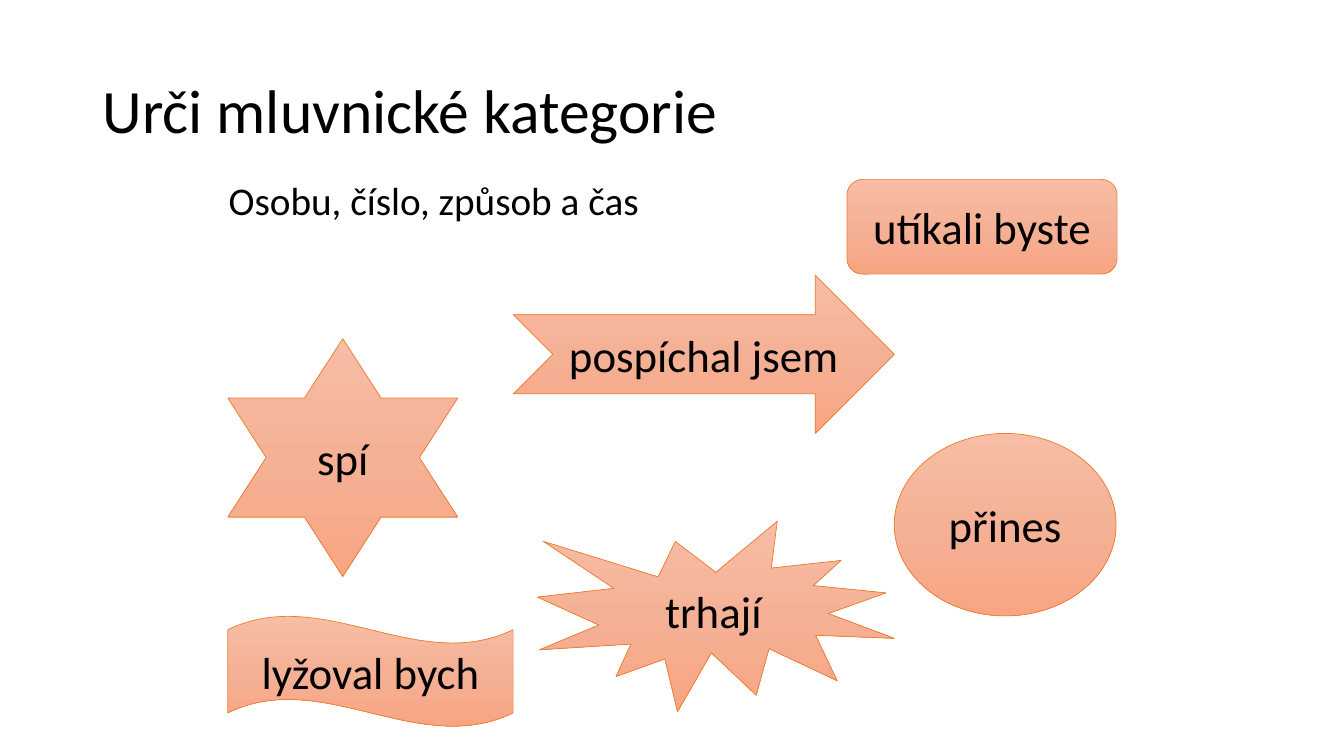
import copy
import pptx
import pptx.util
import pptx.dml.color
import pptx.enum.shapes
import pptx.enum.text
import pptx.oxml.ns

Inches = pptx.util.Inches
Kind = pptx.enum.shapes.MSO_SHAPE
Align = pptx.enum.text.PP_ALIGN
Anchor = pptx.enum.text.MSO_ANCHOR

HUES = {"ink": "000000", "edge": "ED7D31", "top": "F7BDA5", "mid": "F5B196", "base": "F8A582"}
FADE = [(0, "top"), (0.5, "mid"), (1, "base")]

HEADS = [
    ("Urči mluvnické kategorie", (0.92, 0.4, 11.5, 1.45), 44, Anchor.MIDDLE, 0),
    ("Osobu, číslo, způsob a čas", (2.17, 1.75, 9, 0.98), 28, Anchor.TOP, 10),
]
VERBS = [
    ("spí", Kind.STAR_6_POINT, (2.26, 3.36, 2.28, 2.36)),
    ("pospíchal jsem", Kind.NOTCHED_RIGHT_ARROW, (5.09, 2.73, 3.78, 1.57)),
    ("trhají", Kind.EXPLOSION1, (5.33, 5.17, 3.54, 1.89)),
    ("utíkali byste", Kind.ROUNDED_RECTANGLE, (8.4, 1.78, 2.68, 0.94)),
    ("přines", Kind.OVAL, (8.87, 4.3, 2.2, 1.81)),
    ("lyžoval bych", Kind.WAVE, (2.26, 6.11, 2.83, 1.1)),
]


def hue(name):
    return pptx.dml.color.RGBColor.from_string(HUES[name])


def apply(item, form):
    for key, value in form.items():
        setattr(item, key, value)


def write(shape, text, size, anchor, form):
    frame = shape.text_frame
    apply(frame, {"word_wrap": True, "vertical_anchor": anchor})
    para = frame.paragraphs[0]
    apply(para, form)
    run = para.add_run()
    run.text = text
    apply(run.font, {"name": "Calibri", "size": pptx.util.Pt(size)})
    run.font.color.rgb = hue("ink")


def shade(shape):
    shape.fill.gradient()
    shape.fill.gradient_angle = 270
    stops = next(shape._element.iter(pptx.oxml.ns.qn("a:gsLst")))
    stops.insert(1, copy.deepcopy(stops[0]))
    for stop, (place, name) in zip(shape.fill.gradient_stops, FADE):
        stop.position = place
        stop.color.rgb = hue(name)


def main():
    deck = pptx.Presentation()
    apply(deck, {"slide_width": Inches(13.33), "slide_height": Inches(7.5)})
    slide = deck.slides.add_slide(deck.slide_layouts[6])
    for text, box, size, anchor, gap in HEADS:
        shape = slide.shapes.add_textbox(*map(Inches, box))
        form = {"line_spacing": 0.9, "space_before": pptx.util.Pt(gap)}
        write(shape, text, size, anchor, form)
    for text, kind, box in VERBS:
        shape = slide.shapes.add_shape(kind, *map(Inches, box))
        shape.shadow.inherit = False
        shade(shape)
        shape.line.color.rgb = hue("edge")
        shape.line.width = pptx.util.Pt(0.5)
        write(shape, text, 32, Anchor.MIDDLE, {"alignment": Align.CENTER})
    deck.save("out.pptx")


if __name__ == "__main__":
    main()
